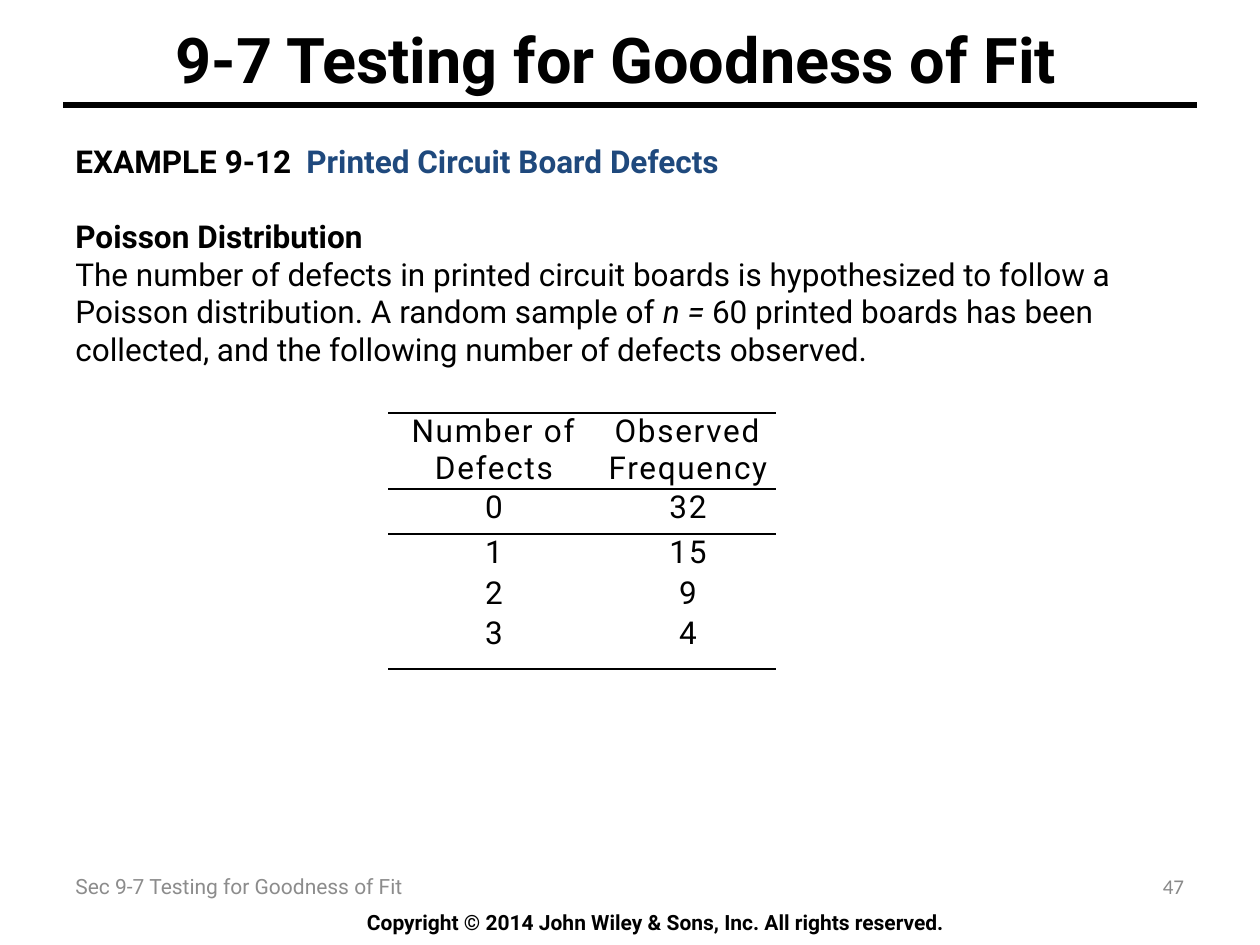
from lxml import etree
from pptx import Presentation
from pptx import util as u
from pptx.dml.color import RGBColor
from pptx.enum import shapes, text
from pptx.oxml import ns

PX = 914400 / 126
COLORS = {"black": "000000", "blue": "1F497D", "footer": "8C8C8C", "number": "898989"}
LEFT, CENTER, RIGHT = text.PP_ALIGN.LEFT, text.PP_ALIGN.CENTER, text.PP_ALIGN.RIGHT
TOP, MIDDLE = text.MSO_ANCHOR.TOP, text.MSO_ANCHOR.MIDDLE


def px(length):
    return u.Emu(round(length * PX))


def add_span(para, words, size, color="black", bold=False, italic=False, face="Roboto"):
    span = para.add_run()
    span.text = words
    font = span.font
    font.name, font.size, font.bold, font.italic = face, u.Pt(size), bold, italic
    font.color.rgb = RGBColor.from_string(COLORS[color])
    return span


deck = Presentation()
deck.slide_width, deck.slide_height = px(1260), px(945)
page = deck.slides.add_slide(deck.slide_layouts[6])

# Rule under the title
rule = page.shapes.add_connector(shapes.MSO_CONNECTOR.STRAIGHT, px(63), px(105), px(1197), px(105))
rule.line.width = u.Pt(3)
rule.line.color.rgb = RGBColor.from_string(COLORS["black"])
etree.SubElement(rule._element.spPr, ns.qn("a:effectLst"))

# Title, footer, page number and copyright line
single_lines = [
    ("9-7 Testing for Goodness of Fit", (84, 0, 1081, 116), CENTER, MIDDLE, 36, "black", True, "Roboto", 29),
    ("Sec 9-7 Testing for Goodness of Fit", (63, 861, 683, 50), LEFT, MIDDLE, 12, "footer", False, "Roboto", 13),
    ("47", (1050, 861, 147, 50), RIGHT, MIDDLE, 12, "number", False, "Calibri", 13),
    ("Copyright © 2014 John Wiley & Sons, Inc. All rights reserved.",
     (210, 903, 892, 38), CENTER, TOP, 12, "black", True, "Roboto", 13),
]
for words, place, align, anchor, size, color, bold, face, right_inset in single_lines:
    box = page.shapes.add_textbox(*map(px, place))
    frame = box.text_frame
    frame.word_wrap, frame.vertical_anchor = True, anchor
    frame.margin_right = px(right_inset)
    para = frame.paragraphs[0]
    para.alignment = align
    add_span(para, words, size, color, bold, face=face)

# Example text: space before in points, then (words, colour, bold, italic)
example = [
    (0, [("EXAMPLE 9-12\t", "black", True, False),
         ("Printed Circuit Board Defects", "blue", True, False)]),
    (21, [("Poisson Distribution", "black", True, False)]),
    (0, [("The number of defects in printed circuit boards is hypothesized to follow a "
          "Poisson distribution. A random sample of ", "black", False, False),
         ("n = ", "black", False, True),
         ("60 printed boards has been collected, and the following number of defects observed.",
          "black", False, False)]),
]
box = page.shapes.add_textbox(px(63), px(136), px(1103), px(357))
frame = box.text_frame
frame.word_wrap = True
for index, (space, spans) in enumerate(example):
    para = frame.add_paragraph() if index else frame.paragraphs[0]
    if space:
        para.space_before = u.Pt(space)
    if index == 0:
        tabs = etree.SubElement(para._p.get_or_add_pPr(), ns.qn("a:tabLst"))
        etree.SubElement(tabs, ns.qn("a:tab"), pos=str(px(231)), algn="l")
    for words, color, bold, italic in spans:
        add_span(para, words, 18, color, bold, italic)

# Defect table
rows = [("Number of Defects", "Observed Frequency"),
        ("0", "32"), ("1", "15"), ("2", "9"), ("3", "4")]
heights = [76, 45, 41, 40, 54]
widths = [212, 176]
holder = page.shapes.add_table(len(rows), len(widths), px(388), px(413), px(sum(widths)), px(sum(heights)))
table = holder.table
table.first_row = table.horz_banding = False
# "No Style, No Grid"
table._tbl.tblPr.find(ns.qn("a:tableStyleId")).text = "{2D5ABB26-0587-4C30-8999-92F81FD0307C}"
for column, width in zip(table.columns, widths):
    column.width = px(width)
borders = {0: ("lnT", "lnB"), 1: ("lnT",), len(rows) - 1: ("lnB",)}
for r, (values, height) in enumerate(zip(rows, heights)):
    table.rows[r].height = px(height)
    for c, value in enumerate(values):
        cell = table.cell(r, c)
        cell.margin_left = cell.margin_right = px(4)
        cell.margin_top = cell.margin_bottom = 0
        para = cell.text_frame.paragraphs[0]
        para.alignment = CENTER
        span = add_span(para, value, 18)
        span.font._element.set("spc", "100")
        for side in borders.get(r, ()):
            line = etree.SubElement(cell._tc.get_or_add_tcPr(), ns.qn("a:" + side), w=str(u.Pt(1)))
            fill = etree.SubElement(line, ns.qn("a:solidFill"))
            etree.SubElement(fill, ns.qn("a:srgbClr"), val=COLORS["black"])
        cell.fill.background()

deck.save("out.pptx")
